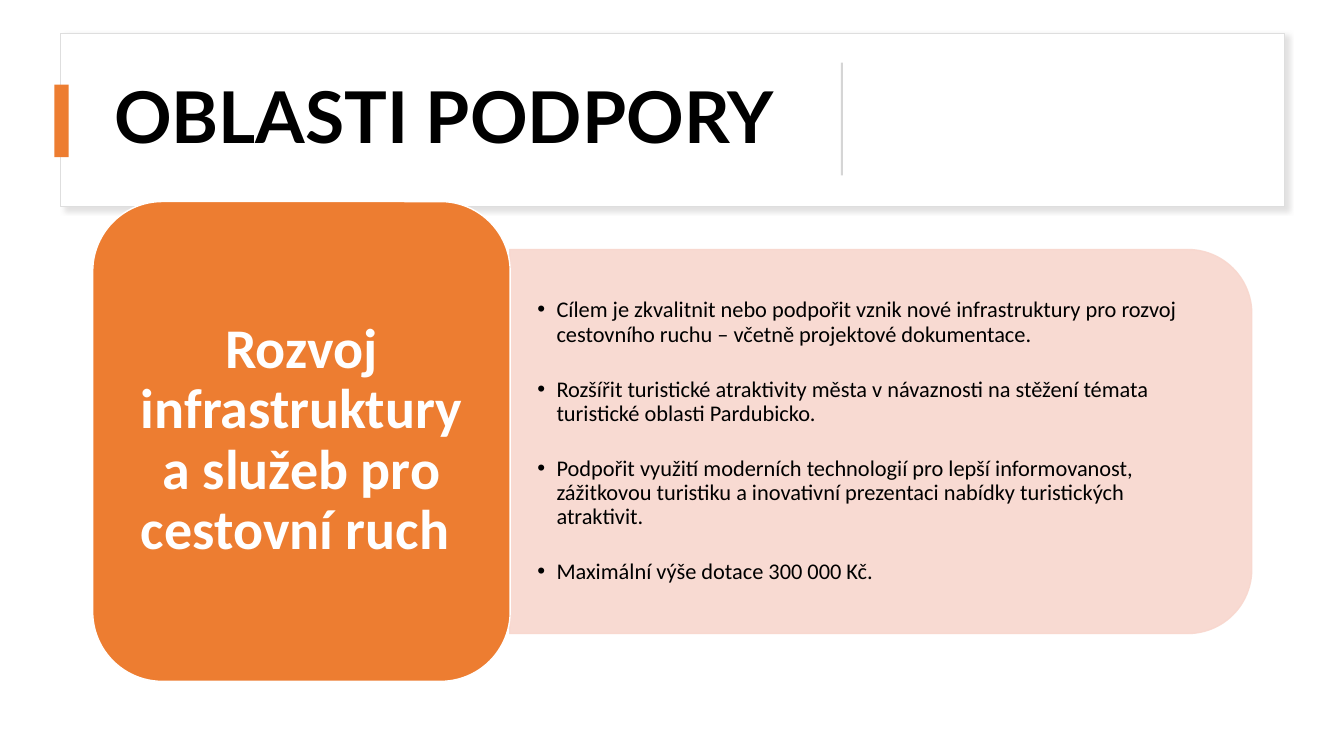
from lxml.etree import SubElement
from pptx import Presentation
from pptx.dml.color import RGBColor
from pptx.enum.shapes import MSO_SHAPE
from pptx.enum.text import MSO_ANCHOR, PP_ALIGN
from pptx.oxml.ns import qn
from pptx.util import Inches, Pt

TITLE = "OBLASTI PODPORY"
AREA = "Rozvoj infrastruktury a služeb pro cestovní ruch "
GOALS = [
    "Cílem je zkvalitnit nebo podpořit vznik nové infrastruktury pro rozvoj cestovního ruchu – včetně projektové dokumentace.",
    "Rozšířit turistické atraktivity města v návaznosti na stěžení témata turistické oblasti Pardubicko.",
    "Podpořit využití moderních technologií pro lepší informovanost, zážitkovou turistiku a inovativní prezentaci nabídky turistických atraktivit.",
    "Maximální výše dotace 300 000 Kč.",
]

BLACK = RGBColor(0x00, 0x00, 0x00)
WHITE = RGBColor(0xFF, 0xFF, 0xFF)
ORANGE = RGBColor(0xED, 0x7D, 0x31)
PEACH = RGBColor(0xF8, 0xD7, 0xCE)
EDGE = RGBColor(0xDE, 0xDE, 0xDE)
GREY = RGBColor(0xD5, 0xD5, 0xD5)

deck = Presentation()
deck.slide_width, deck.slide_height = Inches(13.33), Inches(7.5)
slide = deck.slides.add_slide(deck.slide_layouts[6])


def add_block(kind, box, fill, edge=None, turn=0):
    shape = slide.shapes.add_shape(kind, *map(Inches, box))
    shape.shadow.inherit = False
    shape.rotation = turn
    shape.fill.solid()
    shape.fill.fore_color.rgb = fill
    if edge is None:
        shape.line.fill.background()
    else:
        shape.line.color.rgb = edge
        shape.line.width = Pt(1)
    return shape


def add_alpha(color, value):
    SubElement(color, qn("a:alpha"), val=str(value * 1000))


def add_shade(shape):
    effect = shape._element.spPr.find(qn("a:effectLst"))
    outer = SubElement(effect, qn("a:outerShdw"), blurRad=str(Pt(4)),
                       dist=str(Pt(3)), dir=str(45 * 60000), algn="tl")
    add_alpha(SubElement(outer, qn("a:srgbClr"), val="C5C3C3"), 50)


def add_text(box, pad, items, font, size, color, bold=False, bullet=False):
    frame = slide.shapes.add_textbox(*map(Inches, box)).text_frame
    frame.word_wrap = True
    frame.vertical_anchor = MSO_ANCHOR.MIDDLE
    frame.margin_left = frame.margin_right = Inches(pad[0])
    frame.margin_top = frame.margin_bottom = Inches(pad[1])
    for i, item in enumerate(items):
        para = frame.add_paragraph() if i else frame.paragraphs[0]
        para.line_spacing = 0.9
        if bullet:
            para.alignment = PP_ALIGN.LEFT
            if i:
                para.space_before = Pt(22)
            props = para._p.get_or_add_pPr()
            props.set("marL", str(Inches(0.19)))
            props.set("indent", str(-Inches(0.19)))
            SubElement(props, qn("a:buFont"), typeface="Arial")
            SubElement(props, qn("a:buChar"), char="•")
        else:
            para.alignment = PP_ALIGN.CENTER
        run = para.add_run()
        run.text = item
        run.font.name = font
        run.font.size = Pt(size)
        run.font.bold = bold
        run.font.color.rgb = color


add_shade(add_block(MSO_SHAPE.RECTANGLE, (0.6, 0.33, 12.14, 1.72), WHITE, EDGE))
add_text((0.89, 0.44, 7.03, 1.5), (0.1, 0.05), [TITLE], "Lato", 51, BLACK, bold=True)
add_block(MSO_SHAPE.RECTANGLE, (0.54, 0.84, 0.14, 0.72), ORANGE)
add_block(MSO_SHAPE.RECTANGLE, (7.79, 1.17, 1.12, 0.02), GREY, turn=90)

panel = add_block(MSO_SHAPE.ROUND_2_SAME_RECTANGLE, (6.83, 0.7, 3.81, 7.36), PEACH, PEACH, 90)
for color in list(panel._element.spPr.iter(qn("a:srgbClr"))):
    add_alpha(color, 90)
add_text((5.06, 2.66, 7.17, 3.44), (0.27, 0.14), GOALS, "Calibri", 16, BLACK, bullet=True)

add_block(MSO_SHAPE.ROUNDED_RECTANGLE, (0.92, 2, 4.14, 4.76), ORANGE, WHITE)
add_text((1.12, 2.2, 3.74, 4.35), (0.17, 0.08), [AREA], "Calibri", 40, WHITE, bold=True)

deck.save("out.pptx")
